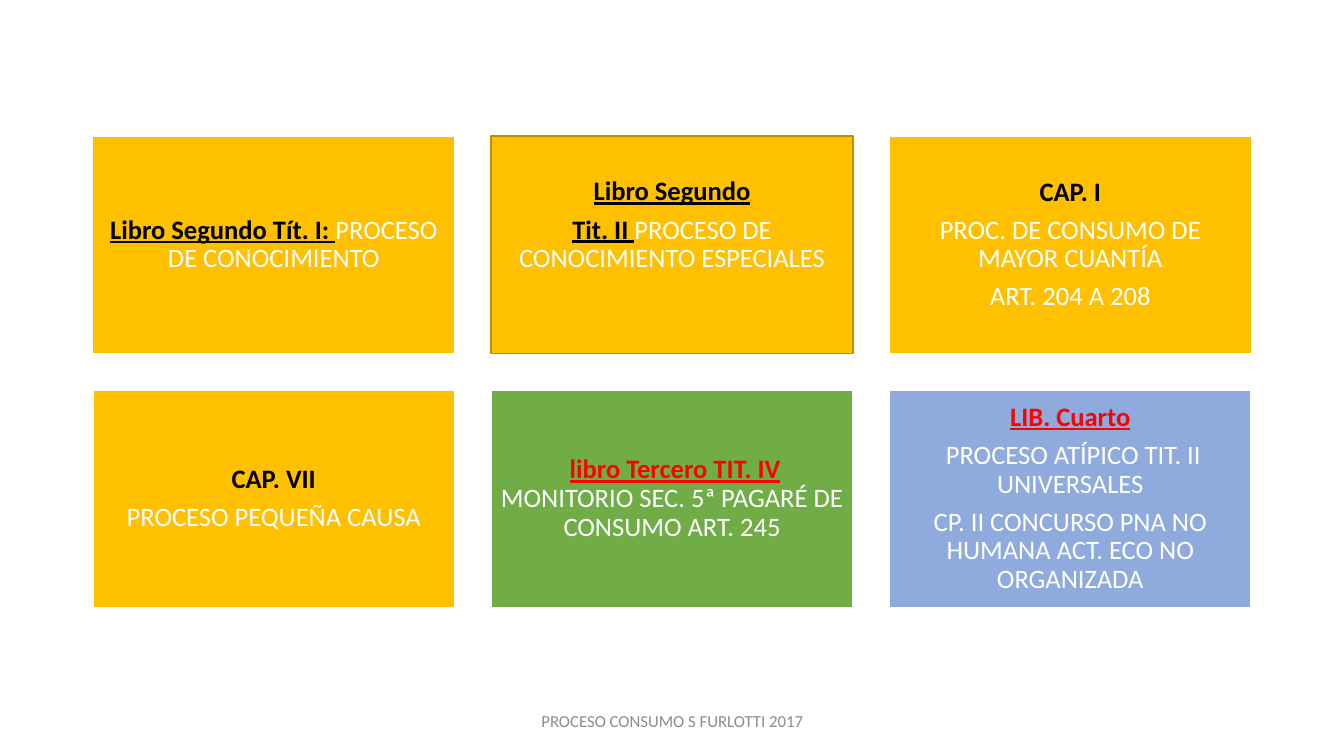
"""Build the slide of consumer proceedings: a grid of six boxes and a footer."""
import pptx
import pptx.util
import pptx.dml.color
import pptx.enum.shapes
import pptx.enum.text

BOXES = [
    {"fill": "gold", "line": "white", "width": 1, "text": [
        [("Libro Segundo Tít. I: ", "title"), ("PROCESO DE CONOCIMIENTO", "body")]]},
    {"fill": "gold", "line": "dark_gold", "width": 1, "bottom": 0.46, "text": [
        [("Libro Segundo", "title")],
        [("Tit. II ", "title"), ("PROCESO DE CONOCIMIENTO ESPECIALES", "body")]]},
    {"fill": "gold", "line": "white", "width": 1, "text": [
        [("CAP. I", "chapter")],
        [("PROC. DE CONSUMO DE MAYOR CUANTÍA", "body")],
        [("ART. 204 A 208", "body")]]},
    {"fill": "gold", "line": "white", "width": 1.5, "text": [
        [("CAP. VII", "chapter")],
        [("PROCESO PEQUEÑA CAUSA", "body")]]},
    {"fill": "green", "line": "white", "width": 1, "text": [
        [(" ", "body"), ("libro Tercero TIT. IV ", "alert"),
         ("MONITORIO SEC. 5ª PAGARÉ DE CONSUMO ART. 245", "body")]]},
    {"fill": "blue", "line": "white", "width": 1.5, "text": [
        [("LIB. Cuarto", "alert")],
        [(" PROCESO ATÍPICO TIT. II UNIVERSALES", "body")],
        [("CP. II CONCURSO PNA NO HUMANA ACT. ECO NO ORGANIZADA", "body")]]},
]
FOOTER = [[("PROCESO CONSUMO S FURLOTTI 2017", "footer")]]

THEME = {
    "font": "Calibri",
    "colors": {"gold": "FFC000", "dark_gold": "BD8E00", "green": "70AD47",
               "blue": "8FAADC", "white": "FFFFFF", "black": "000000",
               "red": "FF0000", "gray": "8C8C8C"},
    "styles": {
        "title": ("black", {"size": 19, "bold": True, "underline": True}),
        "chapter": ("black", {"size": 19, "bold": True}),
        "alert": ("red", {"size": 19, "bold": True, "underline": True}),
        "body": ("white", {"size": 19}),
        "footer": ("gray", {"size": 12}),
    },
}

COLUMNS = 3
LEFT, TOP = 0.92, 1.35
BOX_W, BOX_H = 3.59, 2.16
GAP = 0.36
INSET = 0.08
BOX_PARAGRAPH = {"line_spacing": 0.9, "space_after": pptx.util.Pt(6.65)}

Inches = pptx.util.Inches


def color(name):
    return pptx.dml.color.RGBColor.from_string(THEME["colors"][name])


def set_all(target, values):
    for name, value in values.items():
        setattr(target, name, value)


def write(tf, paragraphs, frame, paragraph):
    set_all(tf, {"word_wrap": True,
                 "vertical_anchor": pptx.enum.text.MSO_ANCHOR.MIDDLE, **frame})
    for i, runs in enumerate(paragraphs):
        p = tf.add_paragraph() if i else tf.paragraphs[0]
        set_all(p, {"alignment": pptx.enum.text.PP_ALIGN.CENTER, **paragraph})
        for text, style in runs:
            r = p.add_run()
            r.text = text
            ink, values = THEME["styles"][style]
            set_all(r.font, {"name": THEME["font"], **values,
                             "size": pptx.util.Pt(values["size"])})
            r.font.color.rgb = color(ink)


def add_box(s, index, box):
    row, column = divmod(index, COLUMNS)
    sp = s.shapes.add_shape(
        pptx.enum.shapes.MSO_SHAPE.RECTANGLE,
        Inches(LEFT + column * (BOX_W + GAP)), Inches(TOP + row * (BOX_H + GAP)),
        Inches(BOX_W), Inches(BOX_H))
    sp.shadow.inherit = False
    sp.fill.solid()
    sp.fill.fore_color.rgb = color(box["fill"])
    sp.line.color.rgb = color(box["line"])
    sp.line.width = pptx.util.Pt(box["width"])
    frame = {f"margin_{side}": Inches(INSET) for side in ("left", "top", "right")}
    frame["margin_bottom"] = Inches(box.get("bottom", INSET))
    write(sp.text_frame, box["text"], frame, BOX_PARAGRAPH)


def main():
    prs = pptx.Presentation()
    set_all(prs, {"slide_width": Inches(13.33), "slide_height": Inches(7.5)})
    s = prs.slides.add_slide(prs.slide_layouts[6])
    for index, box in enumerate(BOXES):
        add_box(s, index, box)
    footer = s.shapes.add_textbox(Inches(4.42), Inches(6.95), Inches(4.5), Inches(0.4))
    write(footer.text_frame, FOOTER, {}, {})
    prs.save("out.pptx")


if __name__ == "__main__":
    main()
